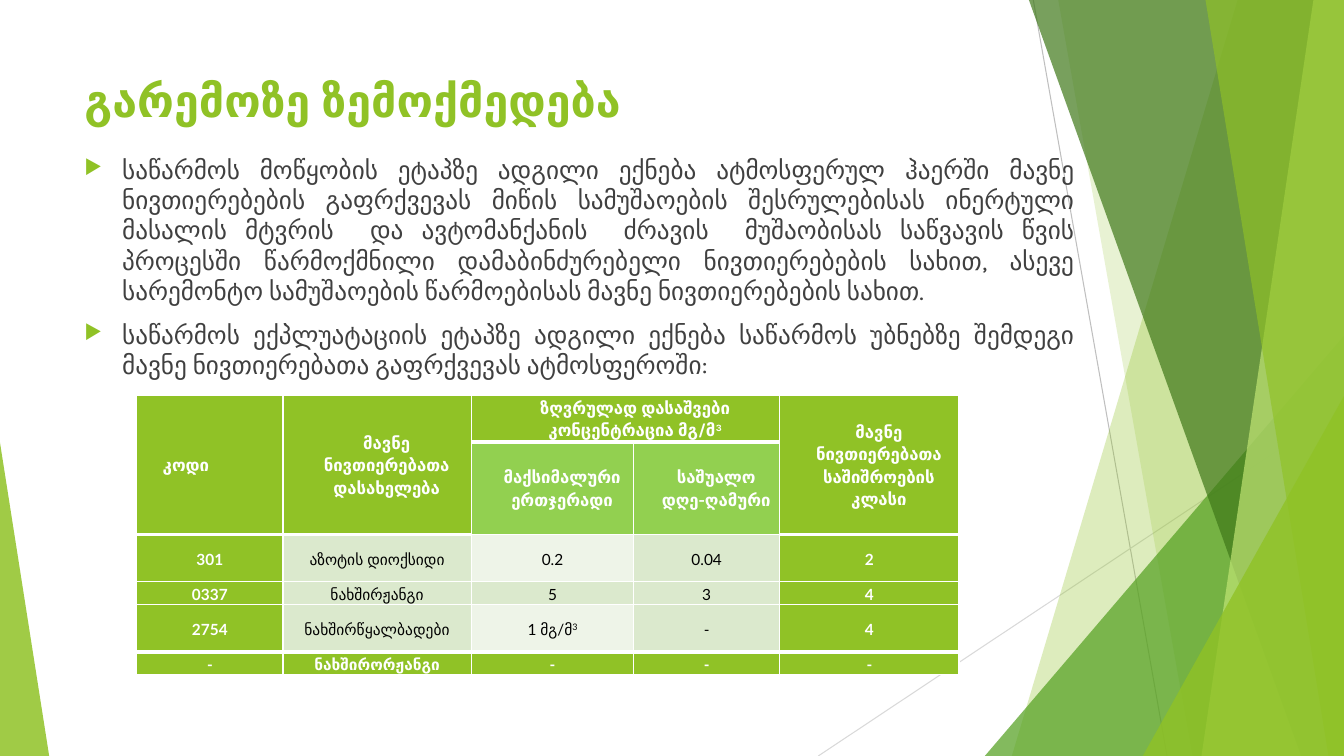
"""Build the slide on the environmental impact of the plant."""
from dataclasses import dataclass

from lxml import etree
from pptx import Presentation
from pptx import util as u
from pptx.dml.color import RGBColor
from pptx.enum import shapes, text
from pptx.oxml.ns import qn

Cm, Pt = u.Cm, u.Pt
WIDTH, HEIGHT = 33.87, 19.05
GREEN, LIME, PALE, PALER = "90C226", "92D050", "DBE9CD", "EEF4E8"
WHITE, BLACK, GREY = "FFFFFF", "000000", "404040"
CENTER, JUSTIFY = text.PP_ALIGN.CENTER, text.PP_ALIGN.JUSTIFY


@dataclass
class Ray:
    x1: float
    y1: float
    x2: float
    color: str


@dataclass
class Band:
    top_x: float
    bottom_x: float
    color: str
    alpha: int


@dataclass
class Triangle:
    left: float
    right: float
    top: float
    apex: float
    color: str
    alpha: int


@dataclass
class Label:
    row: int
    col: int
    text: str
    fill: str = GREEN
    rows: int = 1
    cols: int = 1


RAYS = [Ray(26.04, 0, 29.41, "BFBFBF"), Ray(WIDTH, 10.24, 20.62, "D9D9D9")]
DECOR = [
    Band(31.19, 25.5, GREEN, 30),
    Band(26.67, 30.05, GREEN, 20),
    Triangle(24.82, WIDTH, 8.46, 1, "54A021", 72),
    Band(25.93, 32.79, "3F7819", 70),
    Band(33.1, 30.28, "C0E474", 70),
    Band(30.38, 33.48, GREEN, 65),
    Triangle(28.8, WIDTH, 9.98, 1, GREEN, 80),
    Triangle(0, 1.24, 11.15, 0, GREEN, 85),
]
TITLE = "გარემოზე ზემოქმედება"
BODY = [
    "საწარმოს მოწყობის ეტაპზე ადგილი ექნება ატმოსფერულ ჰაერში მავნე "
    "ნივთიერებების გაფრქვევას მიწის სამუშაოების შესრულებისას ინერტული "
    "მასალის მტვრის  და ავტომანქანის  ძრავის  მუშაობისას საწვავის წვის "
    "პროცესში წარმოქმნილი დამაბინძურებელი ნივთიერებების სახით, ასევე "
    "სარემონტო სამუშაოების წარმოებისას მავნე ნივთიერებების სახით.",
    "საწარმოს ექპლუატაციის ეტაპზე ადგილი ექნება საწარმოს უბნებზე შემდეგი "
    "მავნე ნივთიერებათა გაფრქვევას ატმოსფეროში:",
]
COLS = [3.68, 4.75, 4.09, 3.68, 4.52]
ROWS = [1.12, 1.68, 1.19, 0.58, 1.19, 0.58]
HEADER = [
    Label(0, 0, "კოდი", rows=2),
    Label(0, 1, "მავნე ნივთიერებათა დასახელება", rows=2),
    Label(0, 2, "ზღვრულად დასაშვები კონცენტრაცია მგ/მ^3", cols=2),
    Label(0, 4, "მავნე ნივთიერებათა საშიშროების კლასი", rows=2),
    Label(1, 2, "მაქსიმალური ერთჯერადი", LIME),
    Label(1, 3, "საშუალო დღე-ღამური", LIME),
]
SUBSTANCES = [
    ["301", "აზოტის დიოქსიდი", "0.2", "0.04", "2"],
    ["0337", "ნახშირჟანგი", "5", "3", "4"],
    ["2754", "ნახშირწყალბადები", "1 მგ/მ^3", "-", "4"],
    ["-", "ნახშირორჟანგი", "-", "-", "-"],
]
THICK_BELOW = {(0, c) for c in range(5)} | {(1, 0), (1, 1), (1, 4)} | {(4, c) for c in range(5)}


def rgb(color: str) -> RGBColor:
    return RGBColor.from_string(color)


def add_xml(parent, tag: str, **attrs: str):
    return etree.SubElement(parent, qn(tag), attrs)


def style_run(r, size: float, font: str, color: str, bold: bool = False) -> None:
    r.font.size, r.font.name, r.font.bold = Pt(size), font, bold
    r.font.color.rgb = rgb(color)


def draw_ray(slide, ray: Ray) -> None:
    s = slide.shapes.add_connector(
        shapes.MSO_CONNECTOR.STRAIGHT, Cm(ray.x1), Cm(ray.y1), Cm(ray.x2), Cm(HEIGHT))
    s.line.color.rgb, s.line.width = rgb(ray.color), Pt(0.75)
    add_xml(s._element.spPr, "a:effectLst")


def draw_decor(slide, item: Band | Triangle) -> None:
    if isinstance(item, Band):
        fb = slide.shapes.build_freeform(Cm(item.top_x), 0)
        fb.add_line_segments([(Cm(WIDTH), 0), (Cm(WIDTH), Cm(HEIGHT)),
                              (Cm(item.bottom_x), Cm(HEIGHT))], close=True)
        s = fb.convert_to_shape()
    else:
        s = slide.shapes.add_shape(
            shapes.MSO_SHAPE.ISOSCELES_TRIANGLE, Cm(item.left), Cm(item.top),
            Cm(item.right - item.left), Cm(HEIGHT - item.top))
        s.adjustments[0] = item.apex
    s.shadow.inherit = False
    s.fill.solid()
    s.fill.fore_color.rgb = rgb(item.color)
    s.line.fill.background()
    color = s._element.spPr.find(".//" + qn("a:srgbClr"))
    add_xml(color, "a:alpha", val=str(item.alpha * 1000))


def add_text(slide, left: float, top: float, width: float, height: float, content: str):
    tf = slide.shapes.add_textbox(Cm(left), Cm(top), Cm(width), Cm(height)).text_frame
    tf.word_wrap = True
    tf.text = content
    return tf


def add_bullet(p) -> None:
    p.alignment, p.space_before = JUSTIFY, Pt(10)
    pr = p._p.get_or_add_pPr()
    pr.set("marL", str(Cm(0.95)))
    pr.set("indent", str(-Cm(0.95)))
    add_xml(add_xml(pr, "a:buClr"), "a:srgbClr", val=GREEN)
    add_xml(pr, "a:buSzPct", val="80000")
    add_xml(pr, "a:buChar", char="▶")


def set_borders(cell, row: int, col: int) -> None:
    top = 3 if (row - 1, col) in THICK_BELOW else 1
    bottom = 3 if (row, col) in THICK_BELOW else 1
    pr = cell._tc.get_or_add_tcPr()
    for side, width in zip("LRTB", (1, 1, top, bottom)):
        ln = add_xml(pr, f"a:ln{side}", w=str(Pt(width)))
        add_xml(add_xml(ln, "a:solidFill"), "a:srgbClr", val=WHITE)


def fill_cell(table, label: Label) -> None:
    cell = table.cell(label.row, label.col)
    if label.rows * label.cols > 1:
        cell.merge(table.cell(label.row + label.rows - 1, label.col + label.cols - 1))
    cell.fill.solid()
    cell.fill.fore_color.rgb = rgb(label.fill)
    cell.vertical_anchor = text.MSO_ANCHOR.MIDDLE
    cell.margin_left = cell.margin_right = Cm(0.17)
    cell.margin_top = cell.margin_bottom = 0
    main, _, power = label.text.partition("^")
    cell.text_frame.text = main
    p = cell.text_frame.paragraphs[0]
    p.line_spacing = 1.15
    p.alignment = JUSTIFY if label.row == label.col == 0 else CENTER
    if power:
        r = p.add_run()
        r.text = power
        r._r.get_or_add_rPr().set("baseline", "30000")
    head = label.row < 2
    if head:
        p._p.get_or_add_pPr().set("marL", str(Cm(0.48)))
    strong = label.fill in (GREEN, LIME)
    for r in p.runs:
        style_run(r, 12 if head else 11, "Karla" if head else "Lato",
                  WHITE if strong else BLACK, strong)


def substance_fill(row: int, col: int) -> str:
    if col in (0, 4) or row == 5:
        return GREEN
    return PALER if col == 2 and row != 3 else PALE


def draw_table(slide) -> None:
    table = slide.shapes.add_table(
        len(ROWS), len(COLS), Cm(3.45), Cm(9.96), Cm(sum(COLS)), Cm(sum(ROWS))).table
    table.first_row = table.horz_banding = False
    for column, width in zip(table.columns, COLS):
        column.width = Cm(width)
    for row, height in zip(table.rows, ROWS):
        row.height = Cm(height)
    for i in range(len(ROWS)):
        for j in range(len(COLS)):
            set_borders(table.cell(i, j), i, j)
    body = [Label(i, j, value, substance_fill(i, j))
            for i, values in enumerate(SUBSTANCES, 2) for j, value in enumerate(values)]
    for label in HEADER + body:
        fill_cell(table, label)


def main() -> None:
    prs = Presentation()
    prs.slide_width, prs.slide_height = Cm(WIDTH), Cm(HEIGHT)
    slide = prs.slides.add_slide(prs.slide_layouts[6])
    for ray in RAYS:
        draw_ray(slide, ray)
    for item in DECOR:
        draw_decor(slide, item)
    tf = add_text(slide, 1.88, 1.7, 23.88, 3.66, TITLE)
    style_run(tf.paragraphs[0].runs[0], 32, "Karla", GREEN, True)
    tf = add_text(slide, 1.88, 3.76, 25.45, 14.27, "\n".join(BODY))
    for p in tf.paragraphs:
        add_bullet(p)
        style_run(p.runs[0], 18, "Karla", GREY)
    draw_table(slide)
    prs.save("out.pptx")


if __name__ == "__main__":
    main()
